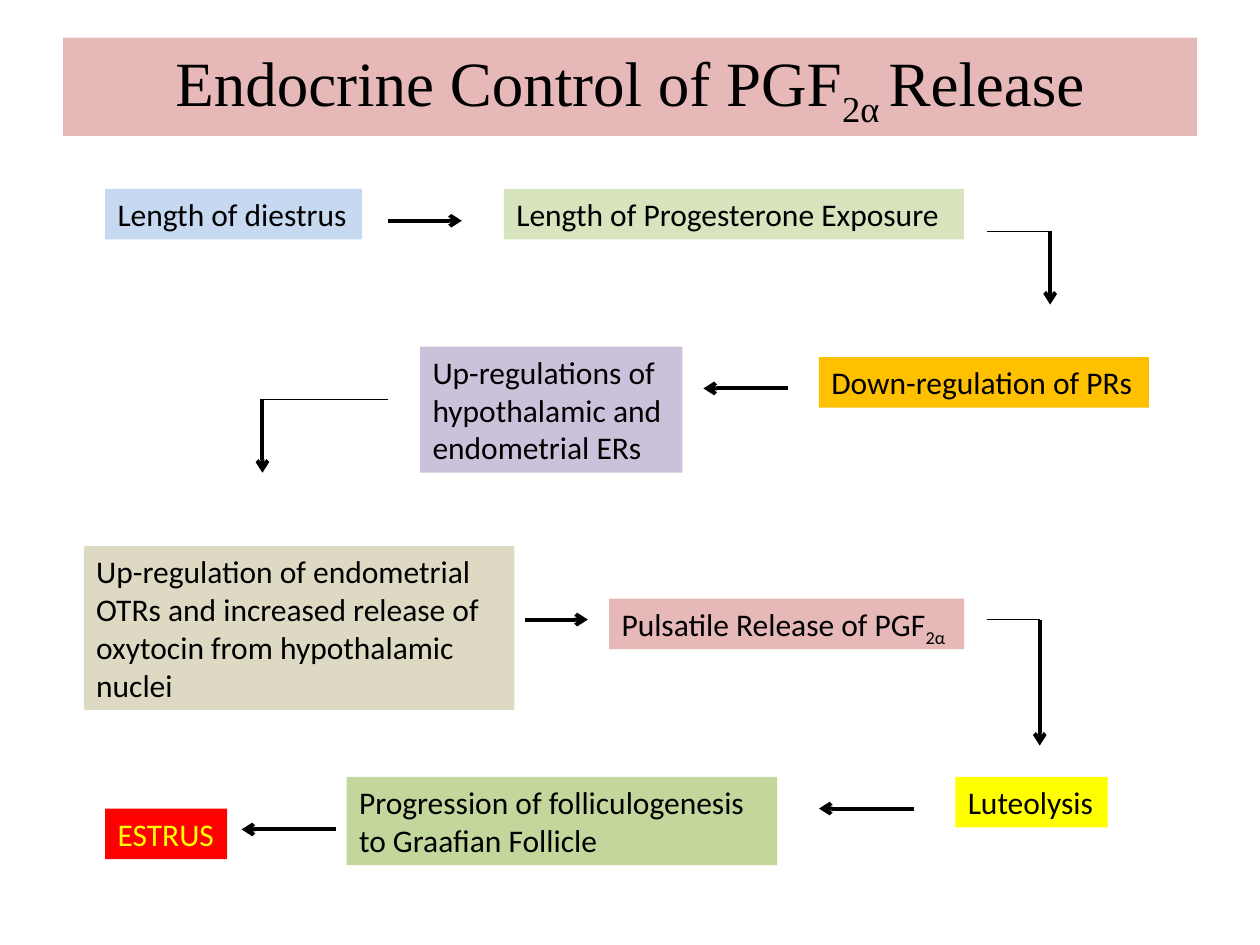
from lxml import etree
from pptx import Presentation
from pptx import util as u
from pptx.dml.color import RGBColor
from pptx.enum import shapes, text
from pptx.oxml.ns import qn

HUES = {
    "ink": "000000", "rose": "E6B9B8", "blue": "C6D9F1", "lime": "D7E4BD",
    "gold": "FFC000", "mauve": "CCC1DA", "sand": "DDD9C3", "sun": "FFFF00",
    "green": "C3D69B", "red": "FF0000",
}

# Text parts alternate between normal and subscript
TITLE = ["Endocrine Control of PGF", "2α ", "Release"]

# Steps: parts, left, top, width (cm), lines of text, fill, ink
STEPS = [
    (["Length of diestrus"], 2.12, 3.81, 5.18, 1, "blue", "ink"),
    (["Length of Progesterone Exposure"], 10.16, 3.81, 9.27, 1, "lime", "ink"),
    (["Down-regulation of PRs"], 16.51, 7.2, 6.65, 1, "gold", "ink"),
    (["Up-regulations of hypothalamic and endometrial ERs"],
     8.47, 6.99, 5.29, 3, "mauve", "ink"),
    (["Up-regulation of endometrial OTRs and increased release of "
      "oxytocin from hypothalamic nuclei"], 1.69, 11.01, 8.68, 4, "sand", "ink"),
    (["Pulsatile Release of PGF", "2α"], 12.28, 12.07, 7.16, 1, "rose", "ink"),
    (["Luteolysis"], 19.26, 15.66, 3.07, 1, "sun", "ink"),
    (["Progression of folliculogenesis to Graafian Follicle"],
     6.99, 15.66, 8.68, 2, "green", "ink"),
    (["ESTRUS"], 2.12, 16.3, 2.46, 1, "red", "sun"),
]

# Arrow routes (cm): the last leg is thick with a head, earlier legs are thin
ROUTES = [
    [(7.83, 4.45), (9.31, 4.45)],
    [(19.9, 4.66), (21.17, 4.66), (21.17, 6.14)],
    [(15.88, 7.83), (14.18, 7.83)],
    [(7.83, 8.05), (5.29, 8.05), (5.29, 9.53)],
    [(10.58, 12.49), (11.85, 12.49)],
    [(19.9, 12.49), (20.96, 12.49), (20.96, 15.03)],
    [(18.42, 16.3), (16.51, 16.3)],
    [(6.77, 16.72), (4.87, 16.72)],
]

LINE, PAD = 0.76, 0.26  # height of a text line and of both margins, cm


def hue(name):
    return RGBColor.from_string(HUES[name])


def place(shape, *box):
    shape.left, shape.top, shape.width, shape.height = map(u.Cm, box)


def paint(shape, fill):
    shape.fill.solid()
    shape.fill.fore_color.rgb = hue(fill)


def write(par, parts, face, size, ink):
    for i, part in enumerate(parts):
        run = par.add_run()
        run.text = part
        if i % 2:
            run._r.get_or_add_rPr().set("baseline", "-25000")
    par.font.name, par.font.size = face, u.Pt(size)
    par.font.color.rgb = hue(ink)


def draw(slide, start, end, head):
    line = slide.shapes.add_connector(
        shapes.MSO_CONNECTOR.STRAIGHT, *map(u.Cm, start + end))
    line.line.color.rgb = hue("ink")
    line.line.width = u.Pt(2.25 if head else 0.75)
    if head:
        etree.SubElement(line.line._get_or_add_ln(), qn("a:tailEnd"), type="arrow")
    etree.SubElement(line._element.spPr, qn("a:effectLst"))


def main():
    deck = Presentation()
    deck.slide_width, deck.slide_height = u.Cm(25.4), u.Cm(19.05)
    slide = deck.slides.add_slide(deck.slide_layouts[5])

    # Title
    title = slide.shapes.title
    place(title, 1.27, 0.76, 22.86, 1.98)
    paint(title, "rose")
    frame = title.text_frame
    frame.auto_size = text.MSO_AUTO_SIZE.NONE
    frame.vertical_anchor = text.MSO_ANCHOR.MIDDLE
    frame.paragraphs[0].alignment = text.PP_ALIGN.CENTER
    write(frame.paragraphs[0], TITLE, "Times New Roman", 36, "ink")

    # Steps
    for parts, left, top, width, rows, fill, ink in STEPS:
        box = slide.shapes.add_textbox(0, 0, 0, 0)
        place(box, left, top, width, rows * LINE + PAD)
        paint(box, fill)
        frame = box.text_frame
        frame.word_wrap = rows > 1
        frame.auto_size = text.MSO_AUTO_SIZE.SHAPE_TO_FIT_TEXT
        write(frame.paragraphs[0], parts, "Calibri", 18, ink)

    # Arrows
    for route in ROUTES:
        for start, end in zip(route, route[1:]):
            draw(slide, start, end, end == route[-1])

    deck.save("out.pptx")


if __name__ == "__main__":
    main()
